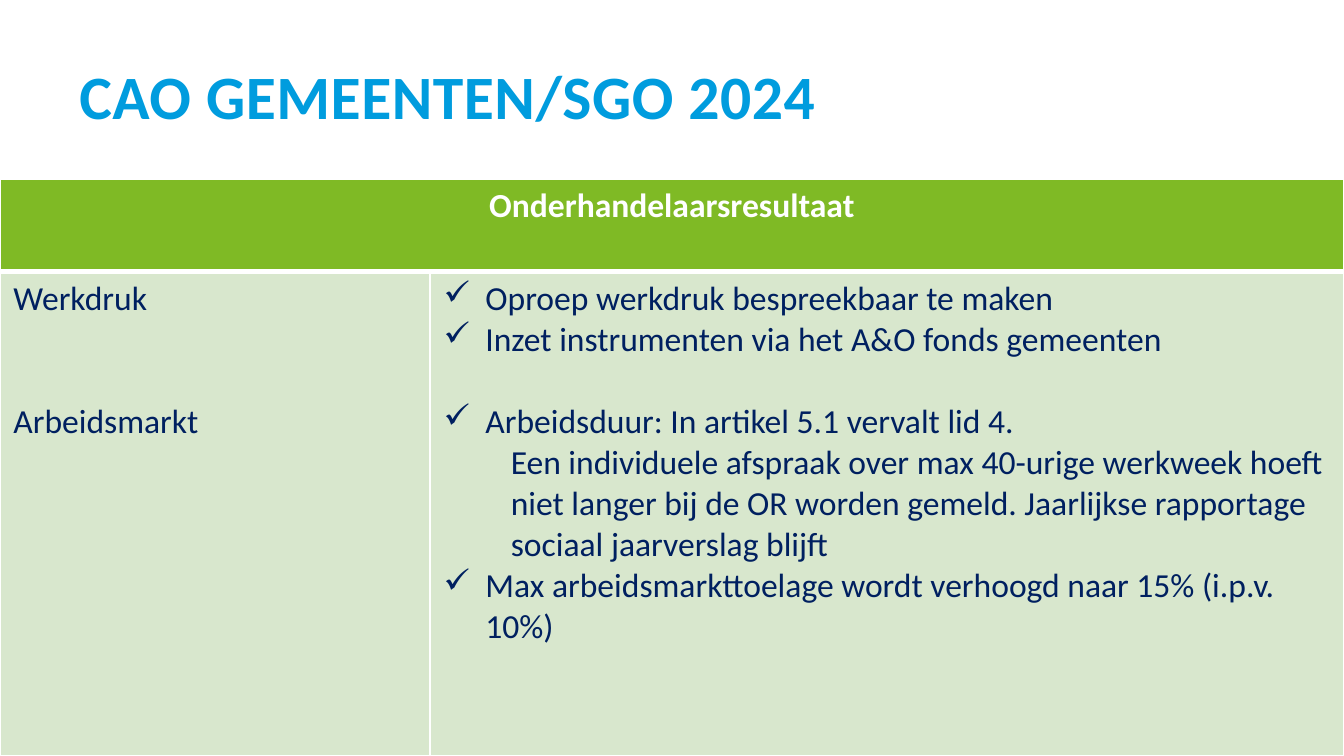
from lxml import etree
from pptx import Presentation
from pptx.dml.color import RGBColor
from pptx.enum.text import MSO_ANCHOR, PP_ALIGN
from pptx.oxml.ns import qn
from pptx.util import Cm, Pt

TOP = MSO_ANCHOR.TOP
CENTER = PP_ALIGN.CENTER
LEFT = PP_ALIGN.LEFT

FONT = "Calibri"
TEXT_SIZE = 18
LINE = 22  # height of one text line in points
COLORS = {
    "title": "009CDE",
    "header": "7FBA25",
    "body": "D8E7CD",
    "text": "002060",
    "white": "FFFFFF",
}

# Paragraphs: text, kind, empty lines above
TOPICS = [
    ("Werkdruk", "plain", 0),
    ("Arbeidsmarkt", "plain", 2),
]
RESULTS = [
    ("Oproep werkdruk bespreekbaar te maken", "check", 0),
    ("Inzet instrumenten via het A&O fonds gemeenten", "check", 0),
    ("Arbeidsduur: In artikel 5.1 vervalt lid 4.", "check", 1),
    ("Een individuele afspraak over max 40-urige werkweek hoeft niet langer "
     "bij de OR worden gemeld. Jaarlijkse rapportage sociaal jaarverslag blijft",
     "detail", 0),
    ("Max arbeidsmarkttoelage wordt verhoogd naar 15% (i.p.v. 10%)", "check", 0),
]


def style_font(paragraph, size, color, bold=False):
    font = paragraph.font
    font.name = FONT
    font.size = Pt(size)
    font.bold = bold
    font.color.rgb = RGBColor.from_string(COLORS[color])


def set_indent(paragraph, kind):
    properties = paragraph._p.get_or_add_pPr()
    if kind == "check":
        properties.set("marL", str(Cm(0.79)))
        properties.set("indent", str(-Cm(0.79)))
        etree.SubElement(properties, qn("a:buChar"), char="✓")
    elif kind == "detail":
        paragraph.level = 1
        properties.set("marL", str(Cm(1.27)))
        properties.set("indent", "0")


def set_borders(cell, bottom=1):
    properties = cell._tc.get_or_add_tcPr()
    widths = {"a:lnL": 1, "a:lnR": 1, "a:lnT": 1, "a:lnB": bottom}
    for position, (tag, width) in enumerate(widths.items()):
        line = etree.Element(qn(tag), w=str(Pt(width)))
        fill = etree.SubElement(line, qn("a:solidFill"))
        etree.SubElement(fill, qn("a:srgbClr"), val=COLORS["white"])
        properties.insert(position, line)  # borders come before the fill


def fill_cell(cell, items, fill, color, bold=False, alignment=LEFT):
    cell.fill.solid()
    cell.fill.fore_color.rgb = RGBColor.from_string(COLORS[fill])
    cell.vertical_anchor = TOP
    frame = cell.text_frame
    for index, (text, kind, gap) in enumerate(items):
        paragraph = frame.add_paragraph() if index else frame.paragraphs[0]
        paragraph.text = text
        paragraph.alignment = alignment
        if gap:
            paragraph.space_before = Pt(gap * LINE)
        set_indent(paragraph, kind)
        style_font(paragraph, TEXT_SIZE, color, bold)


def add_title(slide, text):
    box = slide.shapes.add_textbox(Cm(1.5), Cm(0.9), Cm(20.24), Cm(1.57))
    frame = box.text_frame
    frame.word_wrap = True
    frame.margin_left = frame.margin_right = 0
    frame.margin_top = frame.margin_bottom = 0
    paragraph = frame.paragraphs[0]
    paragraph.text = text
    paragraph.line_spacing = Pt(45)
    style_font(paragraph, 33, "title", bold=True)
    paragraph.runs[0]._r.get_or_add_rPr().set("spc", "30")


def add_result_table(slide):
    table = slide.shapes.add_table(
        2, 2, Cm(0), Cm(3.38), Cm(25.4), Cm(10.9)).table
    for column, width in zip(table.columns, (8.13, 17.27)):
        column.width = Cm(width)
    for row, height in zip(table.rows, (1.75, 9.15)):
        row.height = Cm(height)

    # Header across both columns
    header = table.cell(0, 0)
    header.merge(table.cell(0, 1))
    fill_cell(header, [("Onderhandelaarsresultaat", "plain", 0)],
              "header", "white", bold=True, alignment=CENTER)

    # Topics and their results
    fill_cell(table.cell(1, 0), TOPICS, "body", "text")
    fill_cell(table.cell(1, 1), RESULTS, "body", "text")

    for column in range(2):
        set_borders(table.cell(0, column), bottom=3)
        set_borders(table.cell(1, column))


def main():
    presentation = Presentation()
    presentation.slide_width = Cm(25.4)
    presentation.slide_height = Cm(14.28)
    slide = presentation.slides.add_slide(presentation.slide_layouts[6])
    add_title(slide, "CAO GEMEENTEN/SGO 2024")
    add_result_table(slide)
    presentation.save("out.pptx")


if __name__ == "__main__":
    main()
